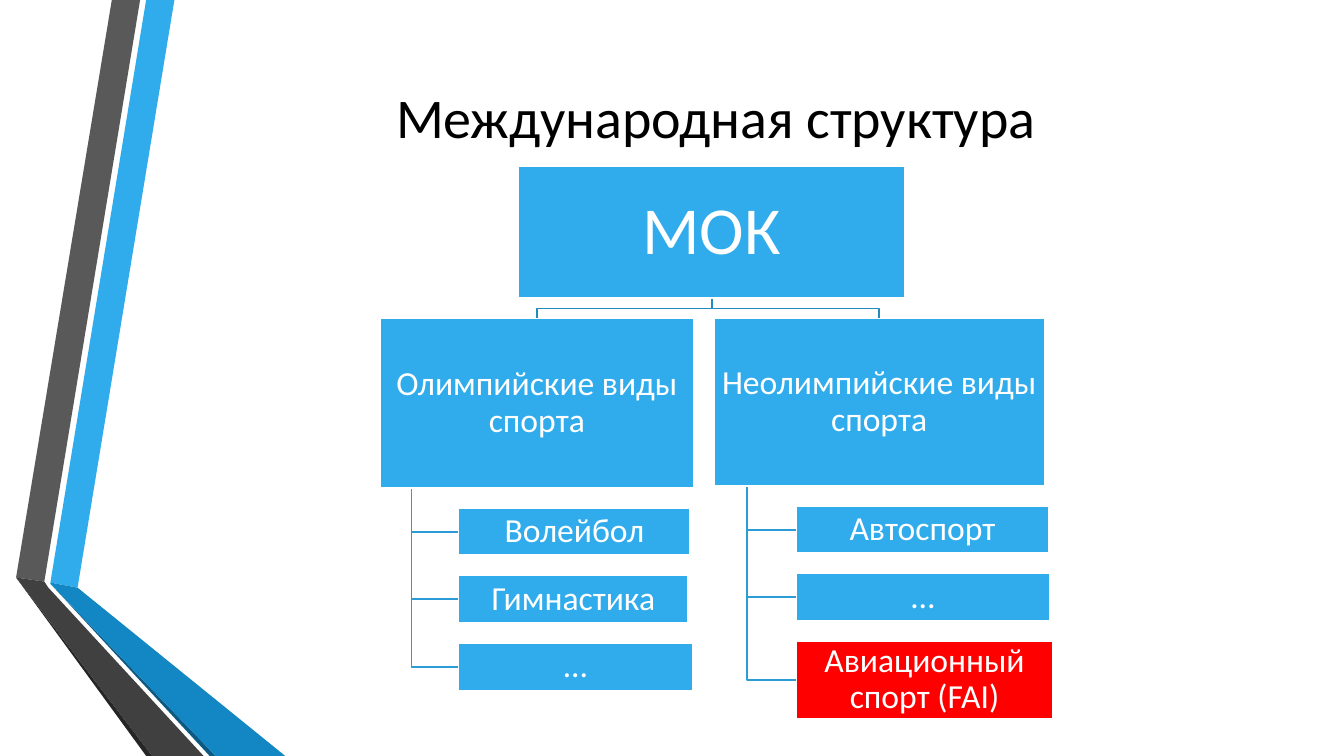
import pptx
import pptx.dml.color
import pptx.enum.shapes
import pptx.enum.text
import pptx.util

Inches = pptx.util.Inches
BLUE = "30ACEC"
RED = "FF0000"
WHITE = "FFFFFF"
GAP = 0.2
LEAF_HEIGHT = 0.47

RIBBONS = [
    (BLUE, [(0.5, 5.78), (0.77, 5.83), (1.73, 0), (1.45, 0)]),
    ("595959", [(1.39, 0), (1.11, 0), (0.16, 5.73), (0.44, 5.77)]),
    ("262626", [(0.16, 5.73), (1.45, 7.5), (1.51, 7.5)]),
    ("0C5A82", [(0.5, 5.79), (2.08, 7.5), (2.14, 7.5)]),
    ("1287C3", [(0.5, 5.79), (2.14, 7.5), (2.83, 7.5), (0.77, 5.83), (0.5, 5.78)]),
    ("404040", [(2.02, 7.5), (0.48, 5.83), (0.44, 5.77), (0.16, 5.73), (1.51, 7.5)]),
]

BRANCHES = [
    ("Олимпийские виды спорта", (3.77, 3.16, 3.11, 1.68), [
        ("Волейбол", 2.3, LEAF_HEIGHT, BLUE),
        ("Гимнастика", 2.28, LEAF_HEIGHT, BLUE),
        ("…", 2.32, LEAF_HEIGHT, BLUE),
    ]),
    ("Неолимпийские виды спорта", (7.08, 3.16, 3.28, 1.66), [
        ("Автоспорт", 2.5, LEAF_HEIGHT, BLUE),
        ("…", 2.51, LEAF_HEIGHT, BLUE),
        ("Авиационный спорт (FAI)", 2.54, 0.77, RED),
    ]),
]


def color(value):
    return pptx.dml.color.RGBColor.from_string(value)


def write_text(shape, text, size=24, fill=WHITE, inset=0.02, spacing=0.9):
    frame = shape.text_frame
    frame.word_wrap = True
    frame.auto_size = pptx.enum.text.MSO_AUTO_SIZE.NONE
    frame.vertical_anchor = pptx.enum.text.MSO_ANCHOR.MIDDLE
    frame.margin_left = frame.margin_right = Inches(inset)
    frame.margin_top = frame.margin_bottom = Inches(inset)
    paragraph = frame.paragraphs[0]
    paragraph.alignment = pptx.enum.text.PP_ALIGN.CENTER
    paragraph.line_spacing = spacing
    run = paragraph.add_run()
    run.text = text
    run.font.name = "Calibri"
    run.font.size = pptx.util.Pt(size)
    run.font.color.rgb = color(fill)


def draw_outline(slide, points, close):
    corners = [(Inches(x), Inches(y)) for x, y in points]
    builder = slide.shapes.build_freeform(*corners[0])
    builder.add_line_segments(corners[1:], close=close)
    shape = builder.convert_to_shape()
    shape.shadow.inherit = False
    return shape


def add_ribbons(slide):
    for fill, points in RIBBONS:
        shape = draw_outline(slide, points, True)
        shape.fill.solid()
        shape.fill.fore_color.rgb = color(fill)
        shape.line.fill.background()


def add_link(slide, points, line):
    shape = draw_outline(slide, points, False)
    shape.fill.background()
    shape.line.color.rgb = color(line)
    shape.line.width = pptx.util.Pt(1.25)


def add_node(slide, text, box, fill=BLUE, **text_format):
    shape = slide.shapes.add_shape(
        pptx.enum.shapes.MSO_SHAPE.RECTANGLE, *map(Inches, box))
    shape.shadow.inherit = False
    shape.fill.solid()
    shape.fill.fore_color.rgb = color(fill)
    shape.line.color.rgb = color(WHITE)
    shape.line.width = pptx.util.Pt(1.25)
    write_text(shape, text, **text_format)


def add_branch(slide, text, box, leaves):
    left, top, width, height = box
    bottom = top + height
    trunk = left + 0.1 * width
    leaf_left = left + 0.25 * width
    leaf_top = bottom + GAP
    leaf_boxes = []
    for _, leaf_width, leaf_height, _ in leaves:
        leaf_boxes.append((leaf_left, leaf_top, leaf_width, leaf_height))
        middle = leaf_top + leaf_height / 2
        add_link(slide, [(trunk, bottom), (trunk, middle), (leaf_left, middle)], "2C9CD6")
        leaf_top += leaf_height + GAP
    add_node(slide, text, box)
    for (leaf_text, _, _, fill), leaf_box in zip(leaves, leaf_boxes):
        add_node(slide, leaf_text, leaf_box, fill)


def add_tree(slide, box):
    left, top, width, height = box
    center = left + width / 2
    bottom = top + height
    for _, (branch_left, branch_top, branch_width, _), _ in BRANCHES:
        branch_center = branch_left + branch_width / 2
        middle = (bottom + branch_top) / 2
        add_link(slide, [(center, bottom), (center, middle),
                         (branch_center, middle), (branch_center, branch_top)], "268ABD")
    add_node(slide, "МОК", box, size=48, inset=0.03)
    for text, branch_box, leaves in BRANCHES:
        add_branch(slide, text, branch_box, leaves)


def add_title(slide, box):
    title = slide.shapes.title
    title.left, title.top, title.width, title.height = map(Inches, box)
    write_text(title, "Международная структура", size=40, fill="000000",
               inset=0.05, spacing=1.0)


def main():
    presentation = pptx.Presentation()
    presentation.slide_width = Inches(13.33)
    presentation.slide_height = Inches(7.5)
    slide = presentation.slides.add_slide(presentation.slide_layouts[5])
    add_ribbons(slide)
    add_title(slide, (1.62, 0.75, 10.96, 0.81))
    add_tree(slide, (5.14, 1.65, 3.84, 1.31))
    presentation.save("out.pptx")


if __name__ == "__main__":
    main()
